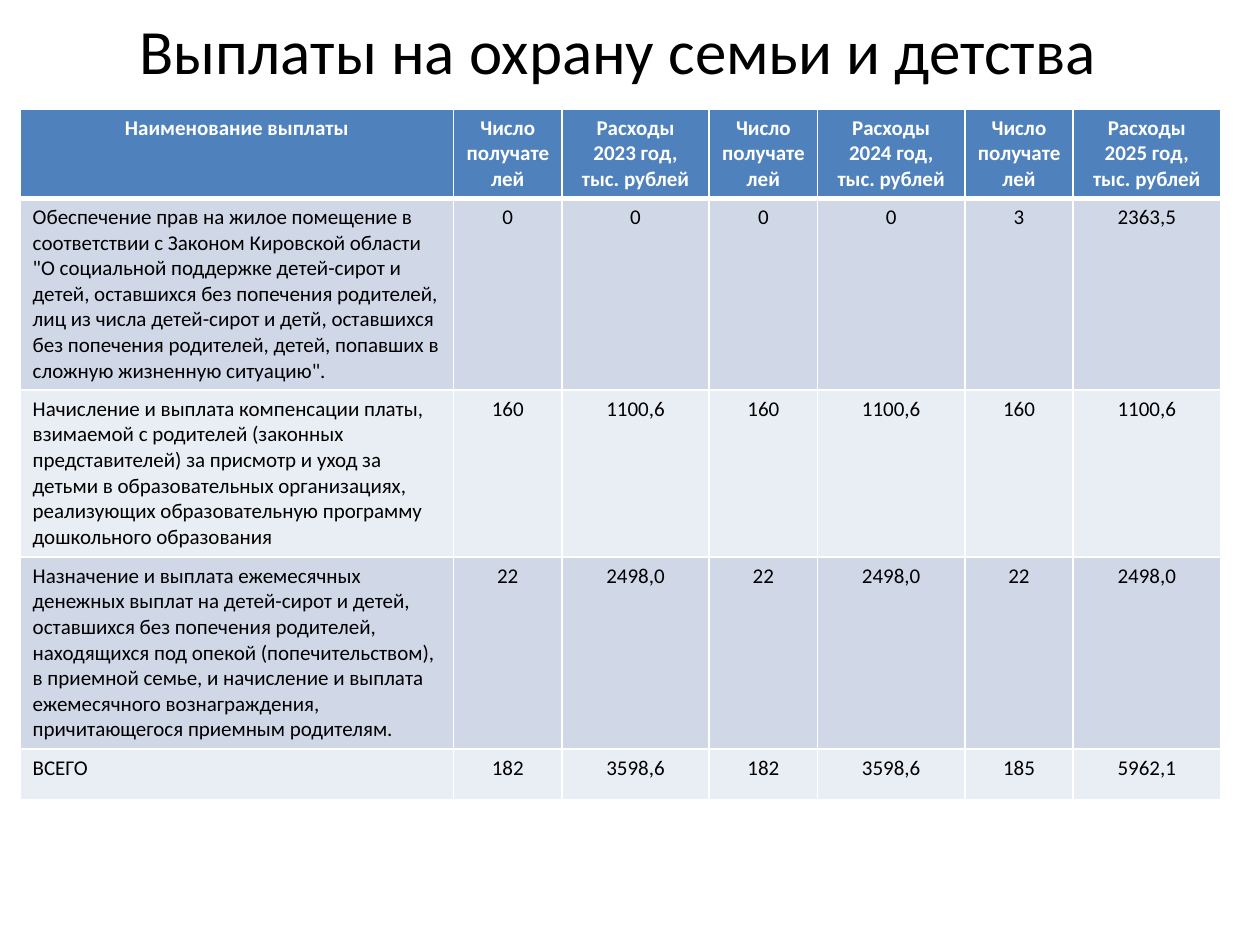
from lxml import etree
from pptx import Presentation
from pptx.dml.color import RGBColor
from pptx.enum.text import MSO_ANCHOR, PP_ALIGN
from pptx.oxml.ns import qn
from pptx.util import Pt

LEFT, CENTER = PP_ALIGN.LEFT, PP_ALIGN.CENTER
MIDDLE = MSO_ANCHOR.MIDDLE
FONT = "Calibri"

# Content
TITLE = "Выплаты на охрану семьи и детства"
YEARS = (2023, 2024, 2025)
HEADER = ["Наименование выплаты"]
for year in YEARS:
    HEADER += ["Число получателей", f"Расходы {year} год, тыс. рублей"]
PAYMENTS = [
    ['Обеспечение прав на жилое помещение в соответствии с Законом Кировской области '
     '"О социальной поддержке детей-сирот и детей, оставшихся без попечения родителей, '
     'лиц из числа детей-сирот и детй, оставшихся без попечения родителей, детей, '
     'попавших в сложную жизненную ситуацию".',
     "0", "0", "0", "0", "3", "2363,5"],
    ["Начисление и выплата компенсации платы, взимаемой с родителей (законных "
     "представителей) за присмотр и уход за детьми в образовательных организациях, "
     "реализующих образовательную программу дошкольного образования",
     "160", "1100,6", "160", "1100,6", "160", "1100,6"],
    ["Назначение и выплата ежемесячных денежных выплат на детей-сирот и детей, "
     "оставшихся без попечения родителей, находящихся под опекой (попечительством), "
     "в приемной семье, и начисление и выплата ежемесячного вознаграждения, "
     "причитающегося приемным родителям.",
     "22", "2498,0", "22", "2498,0", "22", "2498,0"],
    ["ВСЕГО", "182", "3598,6", "182", "3598,6", "185", "5962,1"],
]

# Layout in points
COLUMN_WIDTHS = [247.7] + [61.9, 84.2] * len(YEARS)
ROW_HEIGHTS = [50.4, 109.4, 95.4, 109.4, 29.2]
HEADER_FILL, BAND_FILLS = "4F81BD", ("D0D8E8", "E9EDF4")
WHITE, BLACK = "FFFFFF", "000000"


def color(value):
    return RGBColor.from_string(value)


def format_text(paragraph, size, font_color, alignment, bold=False):
    paragraph.alignment = alignment
    for run in paragraph.runs:
        run.font.name = FONT
        run.font.size = Pt(size)
        run.font.bold = bold
        run.font.color.rgb = color(font_color)


def set_borders(cell, bottom_width):
    properties = cell._tc.get_or_add_tcPr()
    widths = (("a:lnL", 1), ("a:lnR", 1), ("a:lnT", 1), ("a:lnB", bottom_width))
    for index, (tag, width) in enumerate(widths):
        line = etree.Element(qn(tag), w=str(Pt(width)))
        fill = etree.SubElement(line, qn("a:solidFill"))
        etree.SubElement(fill, qn("a:srgbClr"), val=WHITE)
        properties.insert(index, line)


presentation = Presentation()
presentation.slide_width, presentation.slide_height = Pt(720), Pt(540)
slide = presentation.slides.add_slide(presentation.slide_layouts[5])

# Title
title = slide.shapes.title
title.left, title.top, title.width, title.height = Pt(22.3), Pt(0), Pt(661.7), Pt(56.9)
title.text_frame.text = TITLE
title.text_frame.vertical_anchor = MIDDLE
format_text(title.text_frame.paragraphs[0], 36, BLACK, CENTER)

# Payments table
rows = [HEADER] + PAYMENTS
table = slide.shapes.add_table(
    len(rows), len(HEADER), Pt(11.5), Pt(62.2),
    Pt(sum(COLUMN_WIDTHS)), Pt(sum(ROW_HEIGHTS))).table
for column, width in zip(table.columns, COLUMN_WIDTHS):
    column.width = Pt(width)
for row, height in zip(table.rows, ROW_HEIGHTS):
    row.height = Pt(height)

for row_index, values in enumerate(rows):
    is_header = row_index == 0
    fill_color = HEADER_FILL if is_header else BAND_FILLS[(row_index - 1) % 2]
    for column_index, value in enumerate(values):
        cell = table.cell(row_index, column_index)
        cell.text_frame.text = value
        alignment = CENTER if is_header or column_index else LEFT
        format_text(cell.text_frame.paragraphs[0], 12,
                    WHITE if is_header else BLACK, alignment, is_header)
        cell.fill.solid()
        cell.fill.fore_color.rgb = color(fill_color)
        set_borders(cell, 3 if is_header else 1)

presentation.save("out.pptx")
